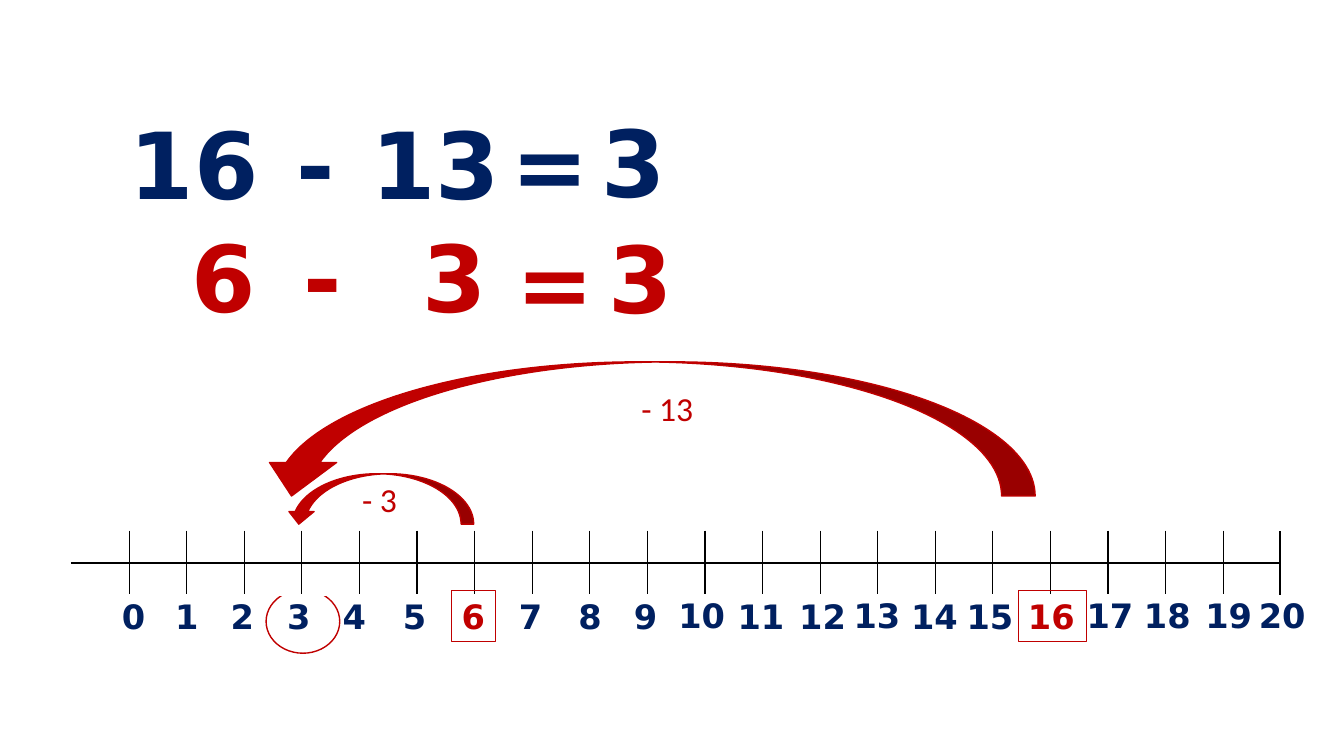
import pptx
import pptx.dml.color
import pptx.enum.shapes
import pptx.enum.text
import pptx.oxml
import pptx.oxml.ns
import pptx.util
from dataclasses import dataclass

Pt = pptx.util.Pt
SHAPES = pptx.enum.shapes.MSO_SHAPE
ALIGN = pptx.enum.text.PP_ALIGN
qualified = pptx.oxml.ns.qn


@dataclass(frozen=True)
class Theme:
    navy: str = "002060"
    red: str = "C00000"
    black: str = "000000"
    white: str = "FFFFFF"
    digits: str = "DejaVu Sans"
    caption: str = "Calibri"
    equation_size: int = 66
    label_size: int = 24


def rgb(color):
    return pptx.dml.color.RGBColor.from_string(color)


def apply(target, formats):
    for name, value in formats.items():
        setattr(target, name, value)


class SlideBuilder:
    def __init__(self, slide, theme):
        self.slide = slide
        self.theme = theme

    def text(self, words, left, top, width, height, size, color, font=None,
             bold=True, align=ALIGN.LEFT, wrap=False, outlined=False):
        box = self.slide.shapes.add_textbox(Pt(left), Pt(top), Pt(width), Pt(height))
        apply(box.text_frame, {
            "word_wrap": wrap,
            "auto_size": pptx.enum.text.MSO_AUTO_SIZE.SHAPE_TO_FIT_TEXT,
        })
        paragraph = box.text_frame.paragraphs[0]
        paragraph.alignment = align
        run = paragraph.add_run()
        run.text = words
        apply(run.font, {"name": font or self.theme.digits, "size": Pt(size), "bold": bold})
        run.font.color.rgb = rgb(color)
        if outlined:
            self.outline(box, color, 0.75)

    def outline(self, shape, color, width):
        shape.line.color.rgb = rgb(color)
        shape.line.width = Pt(width)

    def shape(self, kind, left, top, width, height, fill):
        shape = self.slide.shapes.add_shape(kind, Pt(left), Pt(top), Pt(width), Pt(height))
        shape.shadow.inherit = False
        shape.fill.solid()
        shape.fill.fore_color.rgb = rgb(fill)
        self.outline(shape, self.theme.red, 1)
        return shape

    def jump(self, left, top, width, height):
        """Curved arrow that points back to the left."""
        arrow = self.shape(SHAPES.CURVED_DOWN_ARROW, left, top, width, height, self.theme.red)
        arrow.element.spPr.find(qualified("a:xfrm")).set("flipH", "1")

    def line(self, x1, y1, x2, y2):
        line = self.slide.shapes.add_connector(
            pptx.enum.shapes.MSO_CONNECTOR.STRAIGHT, Pt(x1), Pt(y1), Pt(x2), Pt(y2))
        self.outline(line, self.theme.black, 1)
        line.element.spPr.append(pptx.oxml.parse_xml(
            f'<a:effectLst {pptx.oxml.ns.nsdecls("a")}/>'))

    def border(self, cell, side, color):
        cell.fill._xPr.append(pptx.oxml.parse_xml(
            f'<a:{side} {pptx.oxml.ns.nsdecls("a")} w="12700"><a:solidFill>'
            f'<a:srgbClr val="{color}"/></a:solidFill></a:{side}>'))

    def ruler(self, left, top, width, height, columns, rows=2):
        """Grid with inner borders only, so that its cell edges form axis and ticks."""
        table = self.slide.shapes.add_table(
            rows, columns, Pt(left), Pt(top), Pt(width), Pt(height)).table
        for column in table.columns:
            column.width = Pt(width / columns)
        for i in range(rows):
            table.rows[i].height = Pt(height / rows)
            for j in range(columns):
                cell = table.cell(i, j)
                apply(cell, dict.fromkeys(
                    ("margin_left", "margin_right", "margin_top", "margin_bottom"), 0))
                outer_edges = {"lnL": j == 0, "lnR": j == columns - 1,
                               "lnT": i == 0, "lnB": i == rows - 1}
                for side, outer in outer_edges.items():
                    self.border(cell, side, self.theme.white if outer else self.theme.black)
                cell.fill.solid()
                cell.fill.fore_color.rgb = rgb(self.theme.white)


NAVY_EQUATION = [("16", 85.7, 72.7, 124.6), ("13", 258.5, 72.7, 124.6),
                 ("-", 204.5, 72.7, 72), ("=", 358.6, 72.7, 72), ("3", 422.6, 71.3, 62)]
RED_EQUATION = [("6", 129.6, 153.4, 67), ("-", 209.5, 153.4, 72),
                ("3", 294.5, 153.4, 62), ("3", 427.7, 154.1, 82.8), ("=", 362.2, 157, 72)]
LABEL_LEFTS = [79.9, 118.1, 157.7, 198, 237.6, 280.8, 322.6, 363.6, 406.1, 445.7, 477.4,
               519.8, 563.8, 602.6, 643.7, 683.3, 727.2, 769, 810, 853.9, 892.1]
RAISED_LABELS = {10, 13, 17, 18, 19, 20}
BOXED_LABELS = {6, 16}
RULER_TOP, RULER_HEIGHT = 379.4, 45.6


def main():
    presentation = pptx.Presentation()
    apply(presentation, {"slide_width": Pt(960), "slide_height": Pt(540)})
    theme = Theme()
    builder = SlideBuilder(presentation.slides.add_slide(presentation.slide_layouts[6]), theme)

    builder.shape(SHAPES.OVAL, 190.1, 421.2, 52.6, 45.4, theme.white)
    for color, equation in ((theme.navy, NAVY_EQUATION), (theme.red, RED_EQUATION)):
        for words, left, top, width in equation:
            builder.text(words, left, top, width, 87.2, theme.equation_size, color, wrap=True)

    builder.ruler(51.1, RULER_TOP, 864, RULER_HEIGHT, len(LABEL_LEFTS))
    for number, left in enumerate(LABEL_LEFTS):
        boxed = number in BOXED_LABELS
        builder.text(str(number), left, 421.2 if number in RAISED_LABELS else 421.9,
                     31.7 if number < 10 else 49, 36.2, theme.label_size,
                     theme.red if boxed else theme.navy, outlined=boxed)
    builder.line(914.4, RULER_TOP, 914.4, RULER_TOP + RULER_HEIGHT)

    builder.jump(204.5, 338.4, 133.9, 36)
    builder.jump(184.3, 258.5, 555.1, 95.8)
    for words, left, top, width in (("- 3", 251.3, 338.4, 39.6), ("- 13", 442.8, 273.6, 67.7)):
        builder.text(words, left, top, width, 36.2, theme.label_size, theme.red,
                     font=theme.caption, bold=False, align=ALIGN.CENTER)

    presentation.save("out.pptx")


if __name__ == "__main__":
    main()
